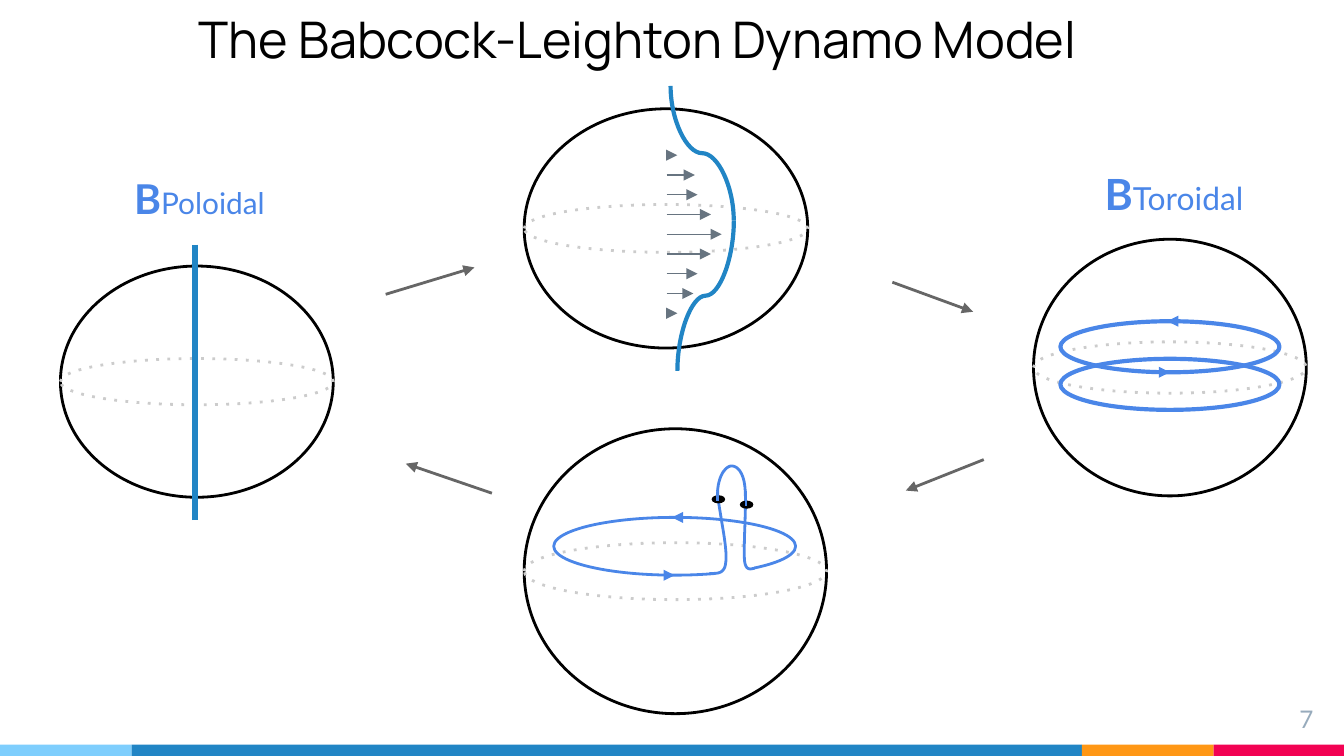
from typing import NamedTuple

from lxml.etree import SubElement
from pptx import Presentation
from pptx.dml.color import RGBColor
from pptx.enum.dml import MSO_LINE as Dash
from pptx.enum.shapes import MSO_CONNECTOR as Link, MSO_SHAPE as Kind
from pptx.enum.text import MSO_ANCHOR as Anchor, PP_ALIGN as Align
from pptx.oxml.ns import qn
from pptx.util import Inches, Pt

BLACK = RGBColor(0x00, 0x00, 0x00)
WHITE = RGBColor(0xFF, 0xFF, 0xFF)
SKY = RGBColor(0x7E, 0xCE, 0xFD)
BLUE = RGBColor(0x21, 0x85, 0xC5)
ROYAL = RGBColor(0x4A, 0x86, 0xE8)
AMBER = RGBColor(0xFF, 0x97, 0x15)
RED = RGBColor(0xF2, 0x02, 0x53)
SLATE = RGBColor(0x67, 0x74, 0x80)
GREY = RGBColor(0x66, 0x66, 0x66)
PALE = RGBColor(0xCC, 0xCC, 0xCC)
MIST = RGBColor(0x97, 0xAB, 0xBC)


class Box(NamedTuple):
    """Left, top, width and height in grid cells."""
    x: float
    y: float
    w: float
    h: float


class Spot(NamedTuple):
    x: float
    y: float


class Pen(NamedTuple):
    color: RGBColor
    width: float
    dots: bool = False


class Run(NamedTuple):
    text: str
    size: float
    color: RGBColor
    font: str = "Lato"
    bold: bool = False


deck = Presentation()
deck.slide_width, deck.slide_height = Inches(10), Inches(5.625)
CELL = deck.slide_width / 100  # the grid has 100 columns and 56.25 square rows
shapes = deck.slides.add_slide(deck.slide_layouts[6]).shapes


def emu(*cells: float) -> list[int]:
    return [round(n * CELL) for n in cells]


def ink(line, pen: Pen) -> None:
    line.color.rgb = pen.color
    line.width = Pt(pen.width)
    if pen.dots:
        line.dash_style = Dash.ROUND_DOT
        line._get_or_add_ln().find(qn("a:prstDash")).set("val", "dot")


def paint(shape, fill: RGBColor | None, pen: Pen | None) -> None:
    shape.shadow.inherit = False
    if fill is None:
        shape.fill.background()
    else:
        shape.fill.solid()
        shape.fill.fore_color.rgb = fill
    if pen is None:
        shape.line.fill.background()
    else:
        ink(shape.line, pen)


def form(kind: Kind, box: Box, fill: RGBColor | None = None, pen: Pen | None = None) -> None:
    paint(shapes.add_shape(kind, *emu(*box)), fill, pen)


def link(a: Spot, b: Spot, pen: Pen, tip: bool = False, kind: Link = Link.STRAIGHT):
    line = shapes.add_connector(kind, *emu(*a, *b))
    ink(line.line, pen)
    if tip:
        SubElement(line.line._get_or_add_ln(), qn("a:tailEnd"), type="triangle")
    SubElement(line._element.spPr, qn("a:effectLst"))
    return line


def bend(a: Spot, b: Spot, pen: Pen) -> None:
    """Draw an S curve that leaves and arrives upright: a level one, turned 270 degrees."""
    x, y = (a.x + b.x) / 2, (a.y + b.y) / 2
    a, b = (Spot(x + y - p.y, y + p.x - x) for p in (a, b))
    curve = link(a, b, pen, kind=Link.CURVE)
    curve._element.spPr.xfrm.set("rot", str(270 * 60000))


def globe(box: Box) -> None:
    """Draw an outline with a dotted ellipse a fifth as tall across its middle."""
    form(Kind.OVAL, box, WHITE, Pen(BLACK, 1.5))
    form(Kind.OVAL, Box(box.x, box.y + 0.4 * box.h, box.w, 0.2 * box.h), None, Pen(PALE, 1.5, True))


def ring(box: Box, width: float, tips: bool = True) -> None:
    """Draw an ellipse, with arrows leftward on top and rightward below."""
    form(Kind.OVAL, box, None, Pen(ROYAL, width))
    if tips:
        mid, end, pen = box.x + box.w / 2, box.y + box.h, Pen(ROYAL, 0.75)
        link(Spot(mid - 0.5, end), Spot(mid, end), pen, True)
        link(Spot(mid + 0.5, box.y), Spot(mid - 0.2, box.y), pen, True)


def trace(start: Spot, arcs: list[tuple[Spot, Spot, Spot]], pen: Pen, steps: int = 16) -> None:
    """Draw an open path of cubic arcs."""
    dots, a = [], start
    for b, c, d in arcs:
        for t in (n / steps for n in range(1, steps + 1)):
            s = 1 - t
            mix = (s**3, 3 * s * s * t, 3 * s * t * t, t**3)
            dots.append(tuple(emu(*(sum(m * v for m, v in zip(mix, axis))
                                    for axis in zip(a, b, c, d)))))
        a = d
    path = shapes.build_freeform(*emu(*start))
    path.add_line_segments(dots, close=False)
    paint(path.convert_to_shape(), None, pen)


def write(box: Box, runs: list[Run], align: Align = Align.LEFT, anchor: Anchor = Anchor.TOP) -> None:
    frame = shapes.add_textbox(*emu(*box)).text_frame
    frame.word_wrap = True
    frame.vertical_anchor = anchor
    frame.margin_left = frame.margin_right = frame.margin_top = frame.margin_bottom = Inches(0.1)
    para = frame.paragraphs[0]
    para.alignment = align
    for item in runs:
        run = para.add_run()
        run.text = item.text
        font = run.font
        font.name, font.size, font.bold = item.font, Pt(item.size), item.bold
        font.color.rgb = item.color


# Footer band, page number and title
left = 0
for wide, color in ((9.8, SKY), (70.7, BLUE), (9.8, AMBER), (9.7, RED)):
    form(Kind.RECTANGLE, Box(left, 55.4, wide, 0.85), color)
    left += wide
write(Box(92.7, 51.4, 6, 3.4), [Run("7", 13, MIST)], Align.RIGHT)
write(Box(13.8, -3.3, 74.4, 9.4), [Run("The Babcock-Leighton Dynamo Model", 27, BLACK, "Manrope")],
      anchor=Anchor.BOTTOM)

# Left globe with an upright line
globe(Box(4.5, 19.8, 20.3, 17.2))
for end in (18.2, 38.7):
    bend(Spot(14.5, end), Spot(14.5, 28), Pen(BLUE, 3))

# Top globe with a column of arrows and a bent line
globe(Box(39, 8.1, 21.1, 17.8))
for row, size in enumerate((0.8, 2.1, 2.3, 3.3, 4.1, 3.3, 2.3, 2, 0.8)):
    y = 11.55 + 1.47 * row
    link(Spot(49.6, y), Spot(49.6 + size, y), Pen(SLATE, 0.75), True)
for end in (Spot(49.9, 6.4), Spot(50.4, 27.6)):
    bend(end, Spot(54.6, 16.4), Pen(BLUE, 2.25))

# Right globe with two rings
globe(Box(76.9, 17.8, 20.3, 19.1))
ring(Box(78.9, 23.9, 16.3, 3.8), 2.25)
ring(Box(78.9, 26.7, 16.3, 3.8), 2.25, tips=False)

# Bottom globe: a gap in the ring, with an arch over it
globe(Box(39, 31.9, 22.5, 21.2))
ring(Box(41.2, 38.5, 18, 4.3), 1.5)
form(Kind.RECTANGLE, Box(53.1, 42, 3, 0.9), WHITE)
thin = Pen(ROYAL, 1.5)
trace(Spot(52.8, 42.7), [
    (Spot(53, 42.6), Spot(53.9, 42.9), Spot(54, 41.9)),
    (Spot(54.2, 40.8), Spot(53.4, 37.7), Spot(53.4, 36.5)),
    (Spot(53.5, 35.3), Spot(54, 34.8), Spot(54.3, 34.7)),
    (Spot(54.6, 34.6), Spot(55.2, 34.8), Spot(55.4, 36)),
    (Spot(55.6, 37.1), Spot(55.3, 40.6), Spot(55.4, 41.7)),
    (Spot(55.5, 42.7), Spot(56.1, 42.2), Spot(56.2, 42.3)),
], thin)
link(Spot(55.5, 36.5), Spot(55.5, 37.1), thin)

# Arrows between the globes
for a, b in ((Spot(28.7, 21.9), Spot(35.3, 19.9)), (Spot(66.4, 21), Spot(72.4, 23.2)),
             (Spot(73.2, 34.2), Spot(67.4, 36.5)), (Spot(36.6, 36.7), Spot(30.2, 34.5))):
    link(a, b, Pen(GREY, 1.5), True)

# Labels
for box, name, size in ((Box(9, 11.9, 21.1, 4.7), "Poloidal", 16),
                        (Box(81.2, 11.5, 13.6, 6.1), "Toroidal", 17)):
    write(box, [Run("B", size + 6, ROYAL, bold=True), Run(name, size, ROYAL)])

# Black dots on the arch
for x, y in (Spot(55.5, 37.3), Spot(53.4, 36.9)):
    form(Kind.OVAL, Box(x - 0.4, y, 0.9, 0.5), BLACK, Pen(BLACK, 0.75))
    link(Spot(x, y - 0.3), Spot(x, y + 0.35), thin)

deck.save("out.pptx")
